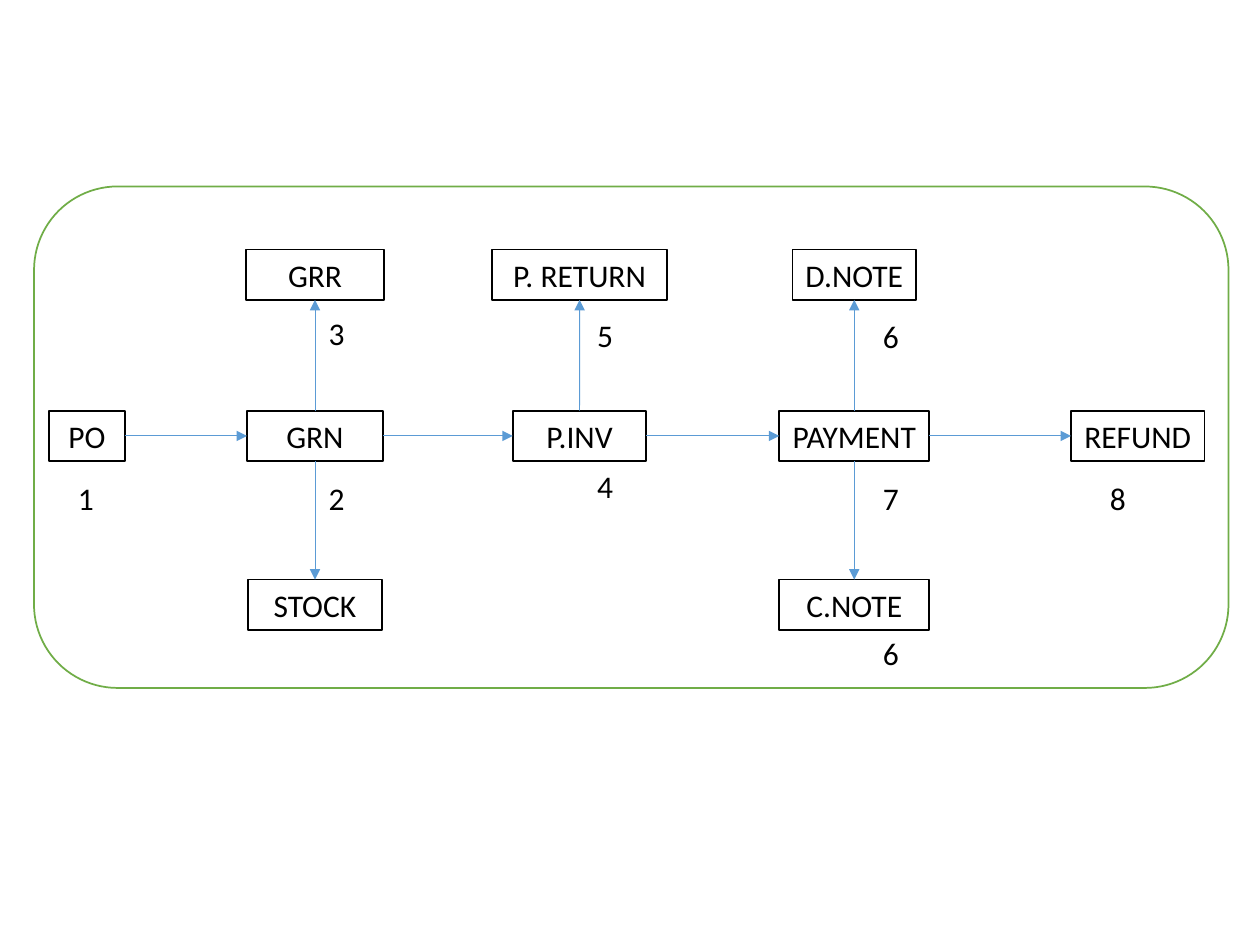
from dataclasses import dataclass

from lxml import etree
from pptx import Presentation
from pptx.dml.color import RGBColor
from pptx.enum.shapes import MSO_CONNECTOR, MSO_SHAPE
from pptx.enum.text import MSO_ANCHOR, PP_ALIGN
from pptx.oxml.ns import qn
from pptx.util import Inches, Pt

RECT = MSO_SHAPE.RECTANGLE
ROUND = MSO_SHAPE.ROUNDED_RECTANGLE
STRAIGHT = MSO_CONNECTOR.STRAIGHT
CENTER, LEFT = PP_ALIGN.CENTER, PP_ALIGN.LEFT
MIDDLE = MSO_ANCHOR.MIDDLE
TOP, WEST, BOTTOM, EAST = range(4)

BLACK, WHITE, GREEN, BLUE = "000000", "FFFFFF", "70AD47", "5B9BD5"
COLS = (0.69, 2.5, 4.6, 6.78, 9.03)  # box centres, inches
ROWS = (1.98, 3.26, 4.6)  # box tops, inches
NOTES = (0.52, 2.51, 4.64, 6.91, 8.71)  # number lefts, inches
HIGH = 0.4


@dataclass
class Step:
    name: str
    col: int
    row: int
    width: float


@dataclass
class Number:
    text: str
    col: int
    top: float


@dataclass
class Arrow:
    start: str
    end: str
    out: int
    into: int


STEPS = (
    Step("PO", 0, 1, 0.6),
    Step("GRN", 1, 1, 1.08),
    Step("P.INV", 2, 1, 1.06),
    Step("PAYMENT", 3, 1, 1.19),
    Step("REFUND", 4, 1, 1.06),
    Step("GRR", 1, 0, 1.09),
    Step("P. RETURN", 2, 0, 1.39),
    Step("D.NOTE", 3, 0, 0.98),
    Step("STOCK", 1, 2, 1.06),
    Step("C.NOTE", 3, 2, 1.19),
)
ARROWS = (
    Arrow("PO", "GRN", EAST, WEST),
    Arrow("GRN", "P.INV", EAST, WEST),
    Arrow("P.INV", "PAYMENT", EAST, WEST),
    Arrow("PAYMENT", "REFUND", EAST, WEST),
    Arrow("GRN", "GRR", TOP, BOTTOM),
    Arrow("P.INV", "P. RETURN", TOP, BOTTOM),
    Arrow("PAYMENT", "D.NOTE", TOP, BOTTOM),
    Arrow("GRN", "STOCK", BOTTOM, TOP),
    Arrow("PAYMENT", "C.NOTE", BOTTOM, TOP),
)
NUMBERS = (
    Number("1", 0, 3.75),
    Number("2", 1, 3.75),
    Number("3", 1, 2.44),
    Number("4", 2, 3.66),
    Number("5", 2, 2.46),
    Number("6", 3, 2.47),
    Number("7", 3, 3.75),
    Number("6", 3, 4.98),
    Number("8", 4, 3.75),
)


def color(code: str) -> RGBColor:
    return RGBColor.from_string(code)


def write(shape, text: str, align) -> None:
    frame = shape.text_frame
    frame.word_wrap = False
    frame.text = text
    para = frame.paragraphs[0]
    para.alignment = align
    para.font.name = "Calibri"
    para.font.size = Pt(18)
    para.font.color.rgb = color(BLACK)


def outline(shape, code: str) -> None:
    shape.shadow.inherit = False
    shape.line.color.rgb = color(code)
    shape.line.width = Pt(1)


def add_frame(shapes) -> None:
    frame = shapes.add_shape(ROUND, Inches(0.27), Inches(1.48), Inches(9.48), Inches(3.98))
    frame.fill.background()
    outline(frame, GREEN)


def add_step(shapes, step: Step):
    left = COLS[step.col] - step.width / 2
    box = shapes.add_shape(
        RECT, Inches(left), Inches(ROWS[step.row]), Inches(step.width), Inches(HIGH))
    box.fill.solid()
    box.fill.fore_color.rgb = color(WHITE)
    outline(box, BLACK)
    box.text_frame.vertical_anchor = MIDDLE
    write(box, step.name, CENTER)
    return box


def add_arrow(shapes, arrow: Arrow, boxes: dict) -> None:
    link = shapes.add_connector(STRAIGHT, 0, 0, 0, 0)
    link.begin_connect(boxes[arrow.start], arrow.out)
    link.end_connect(boxes[arrow.end], arrow.into)
    link.line.color.rgb = color(BLUE)
    link.line.width = Pt(0.5)
    props = link._element.spPr
    etree.SubElement(props.find(qn("a:ln")), qn("a:tailEnd"), type="triangle")
    etree.SubElement(props, qn("a:effectLst"))


def add_number(shapes, number: Number) -> None:
    box = shapes.add_textbox(
        Inches(NOTES[number.col]), Inches(number.top), Inches(0.33), Inches(HIGH))
    write(box, number.text, LEFT)


def main() -> None:
    deck = Presentation()
    deck.slide_width, deck.slide_height = Inches(10), Inches(7.5)
    shapes = deck.slides.add_slide(deck.slide_layouts[6]).shapes
    add_frame(shapes)
    boxes = {step.name: add_step(shapes, step) for step in STEPS}
    for arrow in ARROWS:
        add_arrow(shapes, arrow, boxes)
    for number in NUMBERS:
        add_number(shapes, number)
    deck.save("out.pptx")


if __name__ == "__main__":
    main()
